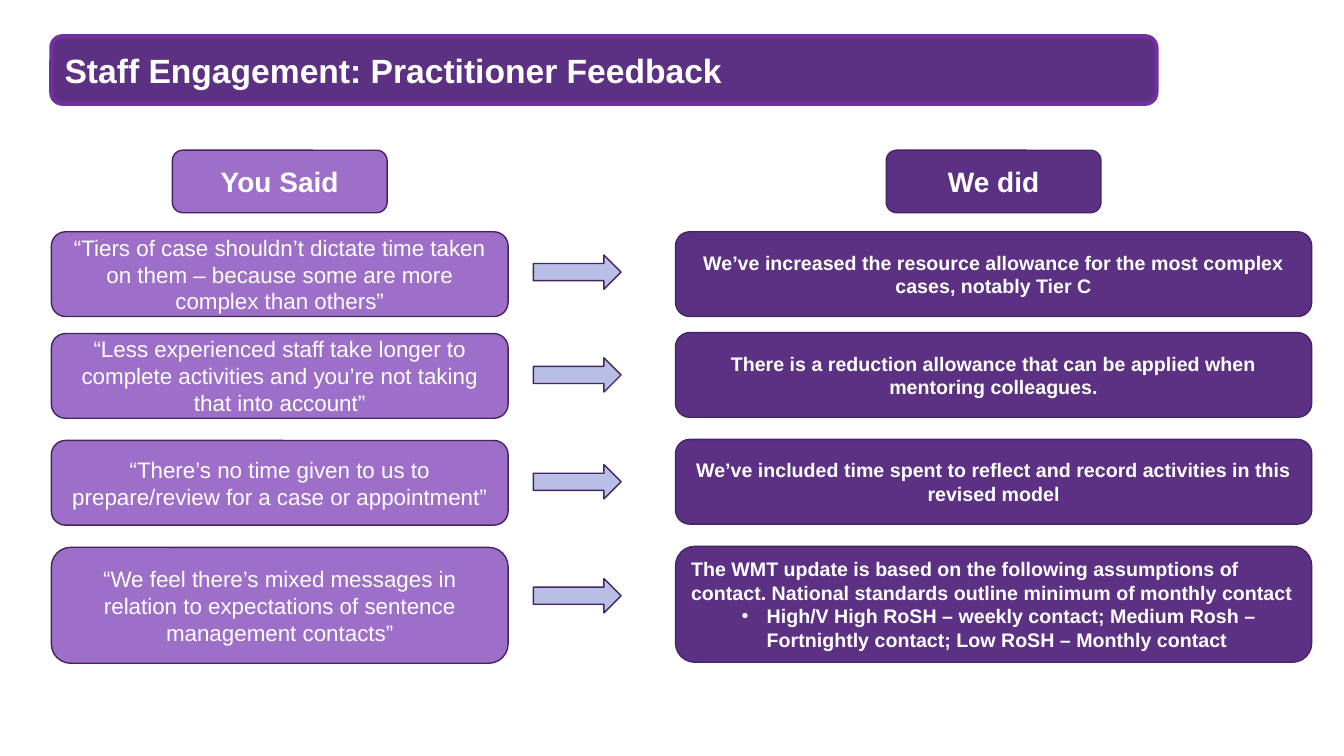
from lxml.etree import SubElement
from pptx import Presentation
from pptx.dml.color import RGBColor
from pptx.enum.shapes import MSO_SHAPE
from pptx.enum.text import MSO_ANCHOR, PP_ALIGN
from pptx.oxml.ns import qn
from pptx.util import Emu, Pt

PX = 9144  # 100 px to the inch

LILAC = "9E6FC9"
PURPLE = "5C3183"
OUTLINE = "442461"
TITLE_OUTLINE = "7030A0"
ARROW_BLUE = "B9BEE6"
WHITE = "FFFFFF"

SAID_LEFT, SAID_WIDTH = 51, 453
DID_LEFT, DID_WIDTH = 670, 631
HEADING_TOP, HEADING_WIDTH, HEADING_HEIGHT = 149, 213, 62

# said, did, top of said, top of did, top of arrow, height
FEEDBACK = [
    ("“Tiers of case shouldn’t dictate time taken on them – because some are more complex than others”",
     "We’ve increased the resource allowance for the most complex cases, notably Tier C",
     230, 230, 253, 84),
    ("“Less experienced staff take longer to complete activities and you’re not taking that into account”",
     "There is a reduction allowance that can be applied when mentoring colleagues.",
     331, 330, 355, 84),
    ("“There’s no time given to us to prepare/review for a case or appointment”",
     "We’ve included time spent to reflect and record activities in this revised model",
     437, 436, 461, 84),
    ("“We feel there’s mixed messages in relation to expectations of sentence management contacts”",
     None, 543, 542, 574, 115),
]
ASSUMPTIONS = ("The WMT update is based on the following assumptions of contact. "
               "National standards outline minimum of monthly contact")
CONTACT_LEVELS = ("High/V High RoSH – weekly contact; Medium Rosh – "
                  "Fortnightly contact; Low RoSH – Monthly contact")


def px(length):
    return Emu(length * PX)


def color(hex_code):
    return RGBColor.from_string(hex_code)


def add_figure(slide, preset, left, top, width, height, fill, line=OUTLINE, line_width=1):
    figure = slide.shapes.add_shape(preset, px(left), px(top), px(width), px(height))
    figure.shadow.inherit = False
    figure.fill.solid()
    figure.fill.fore_color.rgb = color(fill)
    figure.line.color.rgb = color(line)
    figure.line.width = Pt(line_width)
    return figure


def add_bullet(paragraph, margin, hanging):
    properties = paragraph._p.get_or_add_pPr()
    properties.set("marL", str(px(margin)))
    properties.set("indent", str(-px(hanging)))
    SubElement(properties, qn("a:buFont"), typeface="Arial")
    SubElement(properties, qn("a:buChar"), char="•")


def write(paragraph, text, size=14, bold=True, align=PP_ALIGN.CENTER, bullet=False):
    paragraph.alignment = align
    if bullet:
        paragraph.level = 1
        add_bullet(paragraph, margin=75, hanging=25)
    run = paragraph.add_run()
    run.text = text
    run.font.name = "Arial"
    run.font.size = Pt(size)
    run.font.bold = bold
    run.font.color.rgb = color(WHITE)


def add_panel(slide, left, top, width, height, fill, text, line=OUTLINE, line_width=1, **text_format):
    """Rounded box with one paragraph; returns its text frame."""
    panel = add_figure(slide, MSO_SHAPE.ROUNDED_RECTANGLE, left, top, width, height,
                       fill, line, line_width)
    frame = panel.text_frame
    frame.word_wrap = True
    frame.vertical_anchor = MSO_ANCHOR.MIDDLE
    write(frame.paragraphs[0], text, **text_format)
    return frame


def add_feedback_row(slide, said, did, said_top, did_top, arrow_top, height):
    add_panel(slide, SAID_LEFT, said_top, SAID_WIDTH, height, LILAC, said, size=16, bold=False)
    add_figure(slide, MSO_SHAPE.RIGHT_ARROW, 529, arrow_top, 87, 34, ARROW_BLUE)
    if did:
        add_panel(slide, DID_LEFT, did_top, DID_WIDTH, height, PURPLE, did)
    else:
        answer = add_panel(slide, DID_LEFT, did_top, DID_WIDTH, height, PURPLE,
                           ASSUMPTIONS, align=PP_ALIGN.LEFT)
        write(answer.add_paragraph(), CONTACT_LEVELS, align=PP_ALIGN.LEFT, bullet=True)


def main():
    deck = Presentation()
    deck.slide_width, deck.slide_height = px(1333), px(750)
    slide = deck.slides.add_slide(deck.slide_layouts[6])

    add_panel(slide, SAID_LEFT, 36, 1096, 67, PURPLE, "Staff Engagement: Practitioner Feedback",
              line=TITLE_OUTLINE, line_width=3, size=24, align=PP_ALIGN.LEFT)
    for heading, left, fill in (("You Said", 171, LILAC), ("We did", 879, PURPLE)):
        add_panel(slide, left, HEADING_TOP, HEADING_WIDTH, HEADING_HEIGHT, fill, heading, size=20)
    for row in FEEDBACK:
        add_feedback_row(slide, *row)

    deck.save("out.pptx")


if __name__ == "__main__":
    main()
